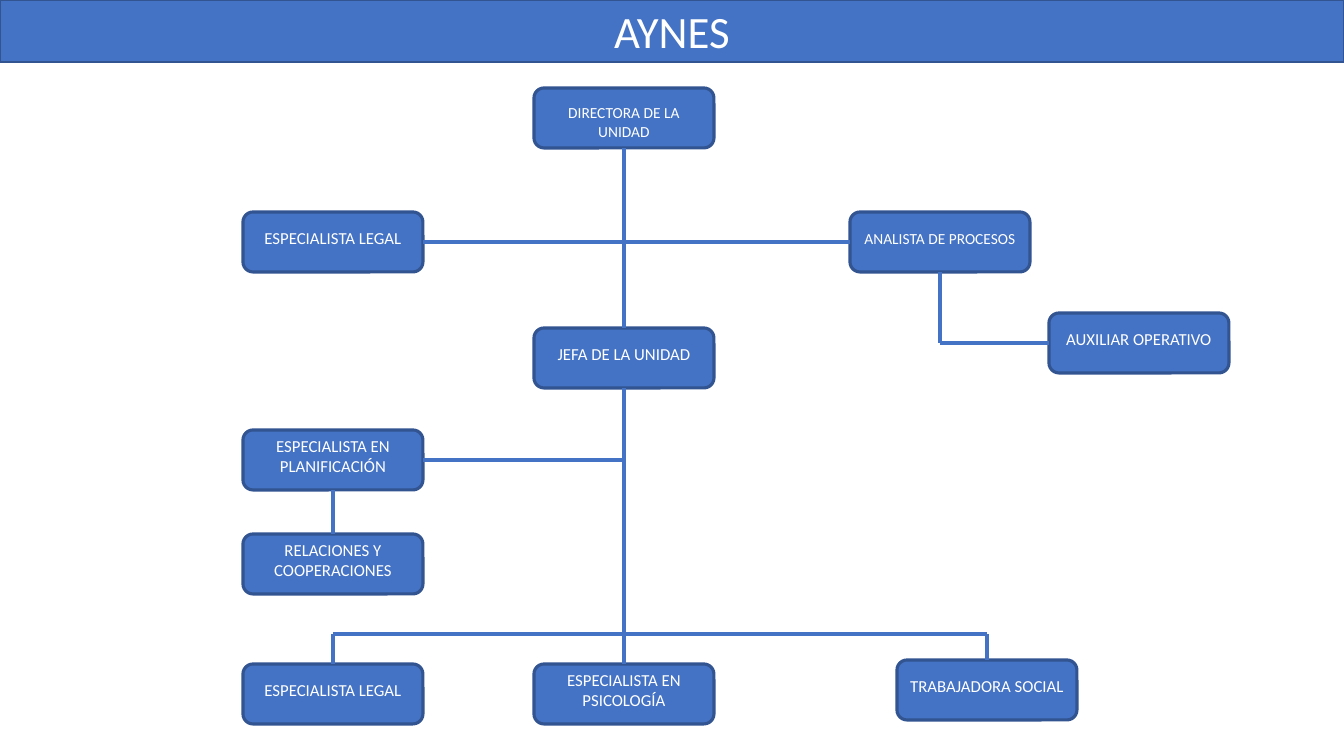
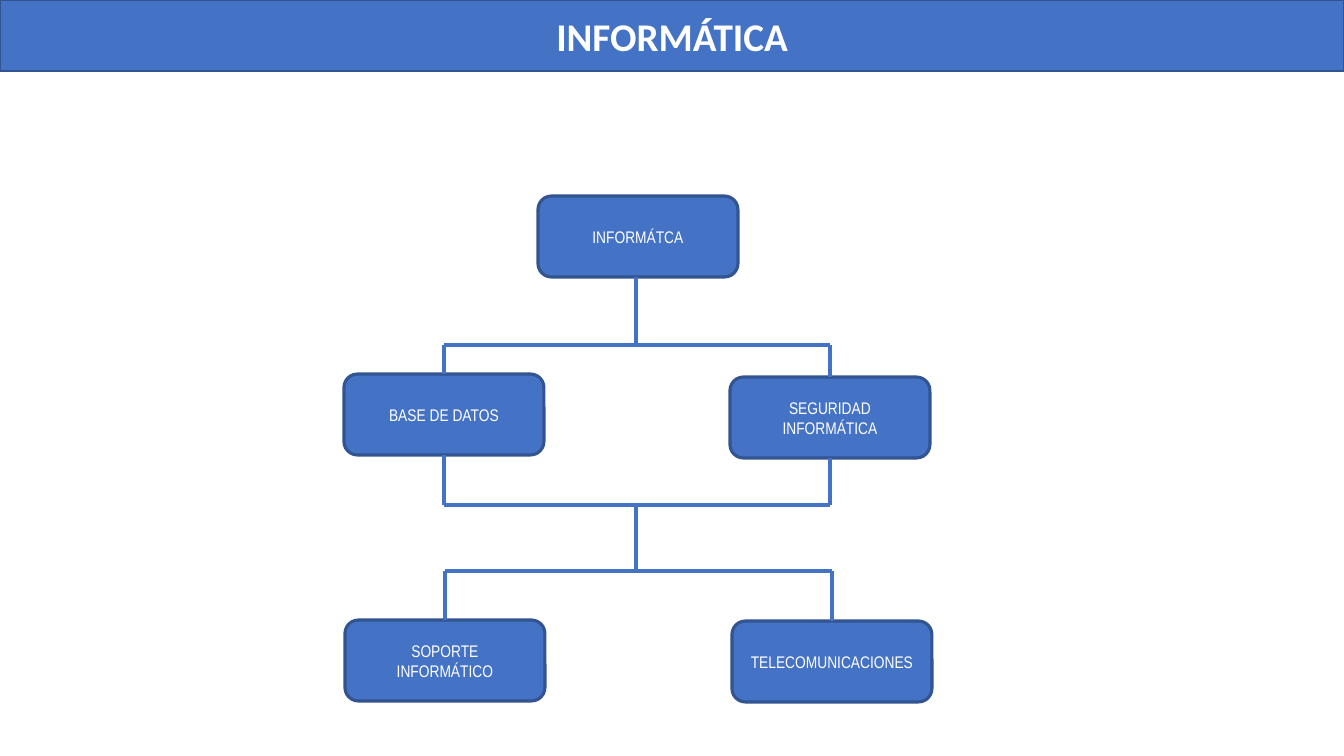
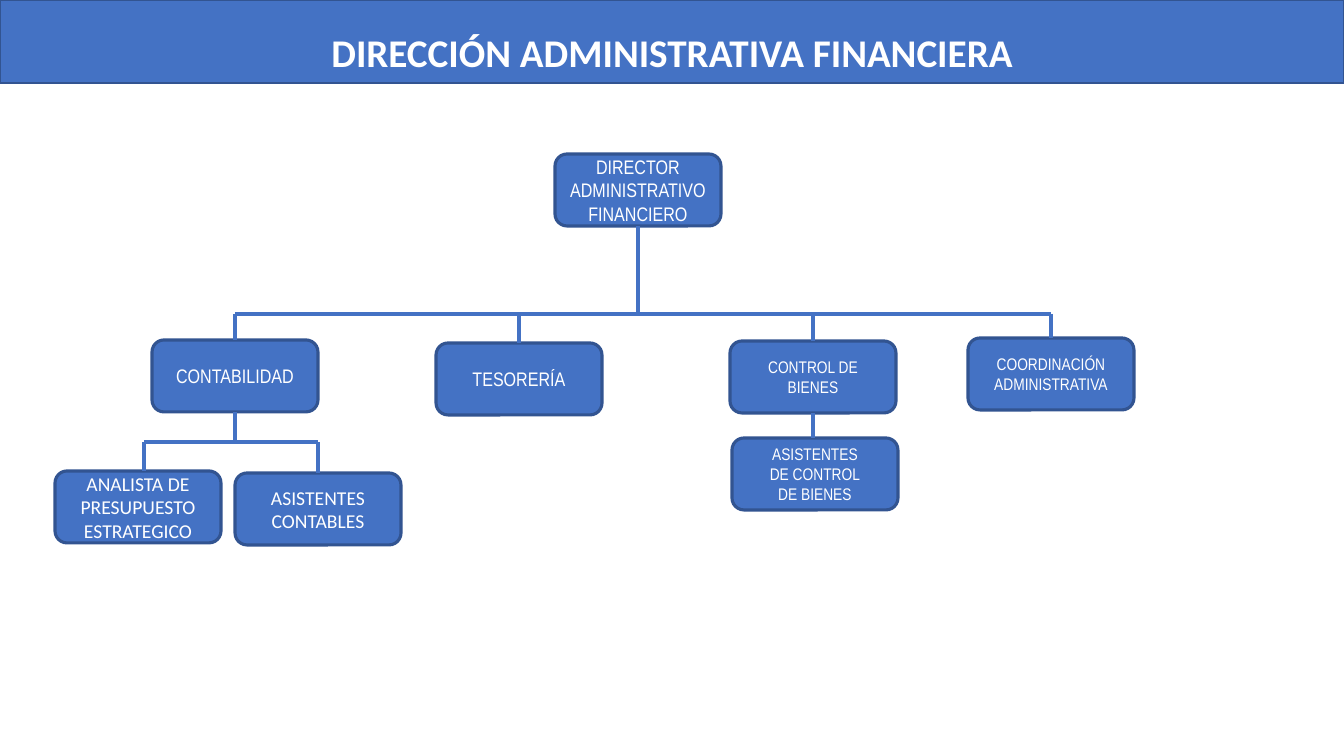
"""Three organisation charts drawn with one shared style."""
from dataclasses import dataclass

from lxml.etree import SubElement
from pptx import Presentation
from pptx.dml.color import RGBColor as Rgb
from pptx.enum.shapes import MSO_CONNECTOR as Connector, MSO_SHAPE as Preset
from pptx.enum.text import MSO_ANCHOR as Anchor, PP_ALIGN as Align
from pptx.oxml.ns import qn
from pptx.util import Emu, Pt

SCALE = 914400 / 100.8
WIDTH, HEIGHT = 1344, 756


def px(length):
    return Emu(round(length * SCALE))


@dataclass(frozen=True)
class Theme:
    fill: Rgb = Rgb(0x44, 0x72, 0xC4)
    edge: Rgb = Rgb(0x32, 0x54, 0x91)
    text: Rgb = Rgb(0xFF, 0xFF, 0xFF)
    sans: str = "Calibri"
    narrow: str = "Arial Narrow"
    thin: float = 1
    thick: float = 2.25
    small: int = 11
    body: int = 12
    large: int = 14
    title: int = 28
    big_title: int = 32
    inset: int = 5


@dataclass(frozen=True)
class Post:
    left: int
    top: int
    width: int
    height: int

    @property
    def right(self):
        return self.left + self.width

    @property
    def bottom(self):
        return self.top + self.height

    @property
    def x(self):
        return self.left + self.width // 2

    @property
    def y(self):
        return self.top + self.height // 2


class OrgDeck:
    def __init__(self, theme):
        self.theme = theme
        self.deck = Presentation()
        self.deck.slide_width, self.deck.slide_height = px(WIDTH), px(HEIGHT)

    def new_slide(self, post_size, font, lift=0):
        self.slide = self.deck.slides.add_slide(self.deck.slide_layouts[6])
        self.post_size, self.font, self.lift = post_size, font, lift

    def block(self, preset, place, text, size, font, edge, lift=0, bold=False):
        shape = self.slide.shapes.add_shape(
            preset, px(place.left), px(place.top), px(place.width), px(place.height))
        shape.shadow.inherit = False
        shape.fill.solid()
        shape.fill.fore_color.rgb = self.theme.fill
        shape.line.color.rgb = self.theme.edge
        shape.line.width = Pt(edge)
        frame = shape.text_frame
        frame.word_wrap = True
        frame.vertical_anchor = Anchor.MIDDLE
        inset = max(self.theme.inset, abs(lift))
        frame.margin_top, frame.margin_bottom = px(inset - lift), px(inset + lift)
        frame.text = text
        for paragraph in frame.paragraphs:
            paragraph.alignment = Align.CENTER
            for run in paragraph.runs:
                run.font.name, run.font.size, run.font.bold = font, Pt(size), bold
                run.font.color.rgb = self.theme.text

    def title(self, text, height, size=Theme.title, bold=True, lift=0):
        self.block(Preset.RECTANGLE, Post(0, 0, WIDTH, height), text, size,
                   self.theme.sans, self.theme.thin, lift, bold)

    def post(self, text, left, top, size=Theme.body, font=None, lift=None):
        place = Post(left, top, *self.post_size)
        self.block(Preset.ROUNDED_RECTANGLE, place, text, size, font or self.font,
                   self.theme.thick, self.lift if lift is None else lift)
        return place

    def line(self, x1, y1, x2, y2):
        link = self.slide.shapes.add_connector(
            Connector.STRAIGHT, px(x1), px(y1), px(x2), px(y2))
        link.line.color.rgb = self.theme.fill
        link.line.width = Pt(self.theme.thick)
        SubElement(link._element.spPr, qn("a:effectLst"))

    def bus(self, y, *stubs):
        columns = [x for x, _ in stubs]
        self.line(min(columns), y, max(columns), y)
        for x, end in stubs:
            self.line(x, y, x, end)


def aynes(org):
    theme = org.theme
    org.new_slide((180, 60), theme.sans, lift=4)
    org.title("AYNES", 62, theme.big_title, bold=False)
    left, centre = 243, 534
    director = org.post("DIRECTORA DE LA UNIDAD", centre, 88, theme.small, lift=-4)
    analyst = org.post("ANALISTA DE PROCESOS", 850, 212, theme.small)
    head = org.post("JEFA DE LA UNIDAD", centre, 328)
    legal = org.post("ESPECIALISTA LEGAL", left, 212)
    planning = org.post("ESPECIALISTA EN PLANIFICACIÓN", left, 430)
    relations = org.post("RELACIONES Y COOPERACIONES", left, 534)
    assistant = org.post("AUXILIAR OPERATIVO", 1049, 313)
    social = org.post("TRABAJADORA SOCIAL", 897, 660)
    psychology = org.post("ESPECIALISTA EN PSICOLOGÍA", centre, 664)
    unit_legal = org.post("ESPECIALISTA LEGAL", left, 664)
    org.line(director.x, director.bottom, head.x, head.top)
    org.line(legal.right, legal.y, analyst.left, analyst.y)
    org.line(head.x, head.bottom, psychology.x, psychology.top)
    org.line(planning.right, planning.y, head.x, planning.y)
    org.line(planning.x, planning.bottom, relations.x, relations.top)
    org.line(analyst.x, analyst.bottom, analyst.x, assistant.y)
    org.line(analyst.x, assistant.y, assistant.left, assistant.y)
    org.bus(634, (unit_legal.x, unit_legal.top), (social.x, social.top))


def computing(org):
    org.new_slide((200, 81), org.theme.narrow)
    org.title("INFORMÁTICA", 71)
    unit = org.post("INFORMÁTCA", 538, 196)
    data = org.post("BASE DE DATOS", 344, 374)
    security = org.post("SEGURIDAD INFORMÁTICA", 730, 377)
    support = org.post("SOPORTE\nINFORMÁTICO", 345, 620)
    telecom = org.post("TELECOMUNICACIONES", 732, 621)
    spine, upper, middle, lower = 636, 345, 505, 571
    org.bus(upper, (spine, unit.bottom), (data.x, data.top), (security.x, security.top))
    org.bus(middle, (data.x, data.bottom), (security.x, security.bottom), (spine, lower))
    org.bus(lower, (support.x, support.top), (telecom.x, telecom.top))


def finance(org):
    theme = org.theme
    org.new_slide((166, 72), theme.narrow)
    org.title("DIRECCIÓN ADMINISTRATIVA FINANCIERA", 83, lift=-10)
    director = org.post("DIRECTOR ADMINISTRATIVO FINANCIERO", 555, 154, theme.large)
    accounting = org.post("CONTABILIDAD", 152, 340, theme.large)
    treasury = org.post("TESORERÍA", 436, 343, theme.large)
    assets = org.post("CONTROL DE BIENES", 730, 341)
    coordination = org.post("COORDINACIÓN ADMINISTRATIVA", 968, 338)
    asset_staff = org.post("ASISTENTES\nDE CONTROL\nDE BIENES", 732, 438)
    budget = org.post("ANALISTA DE PRESUPUESTO\nESTRATEGICO", 55, 471, theme.large, theme.sans)
    accountants = org.post("ASISTENTES CONTABLES", 235, 473, theme.large, theme.sans)
    areas = (accounting, treasury, assets, coordination)
    org.bus(314, (director.x, director.bottom), *((area.x, area.top) for area in areas))
    org.line(assets.x, assets.bottom, assets.x, asset_staff.top)
    org.bus(442, (accounting.x, accounting.bottom), (budget.x + 6, budget.top),
            (accountants.x, accountants.top))


def main():
    org = OrgDeck(Theme())
    for draw in (aynes, computing, finance):
        draw(org)
    org.deck.save("out.pptx")


if __name__ == "__main__":
    main()
